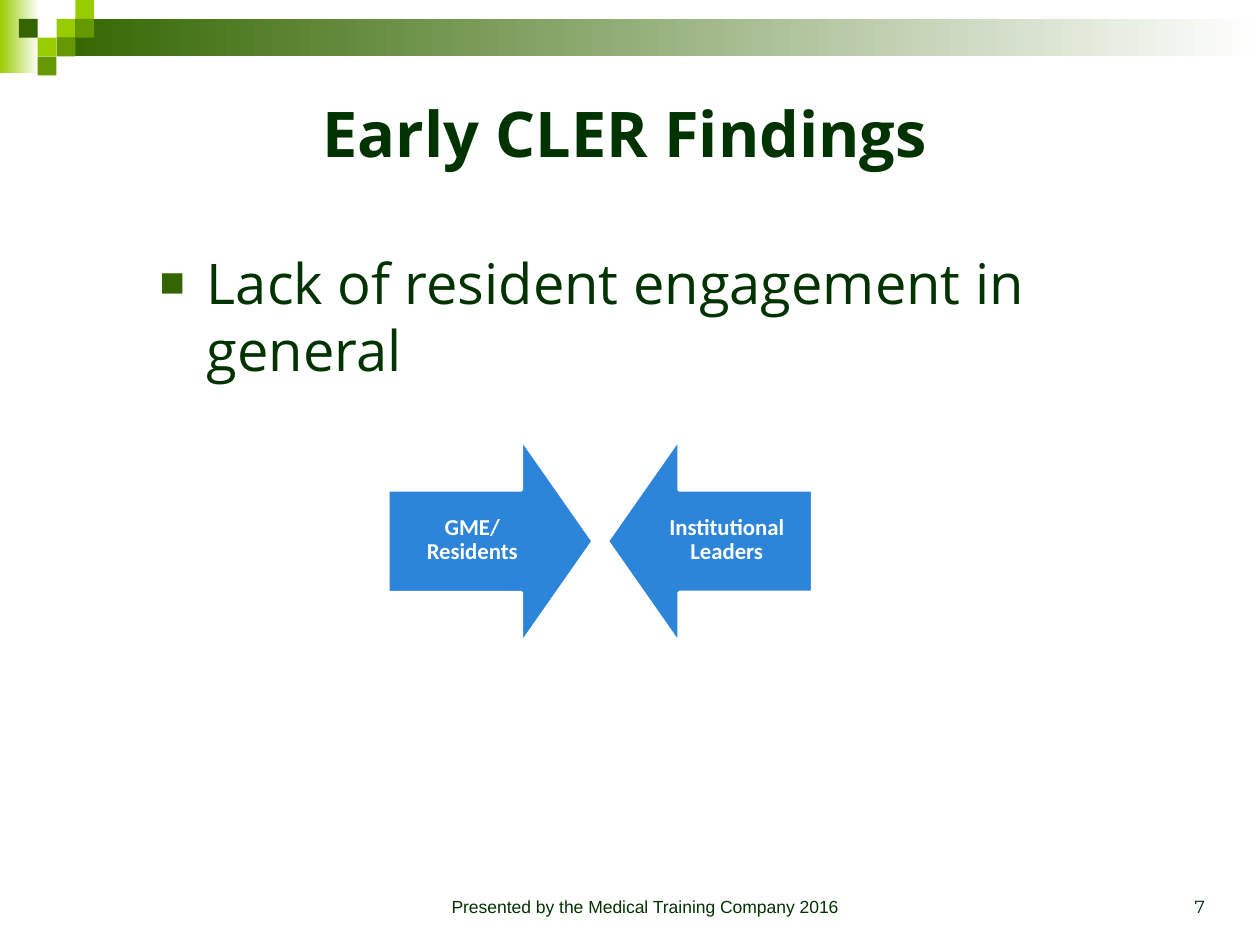
from dataclasses import dataclass

from lxml.etree import SubElement as Sub
from pptx import Presentation as Deck
from pptx.dml.color import RGBColor as Rgb
from pptx.enum.shapes import MSO_SHAPE as Kind
from pptx.enum.text import MSO_ANCHOR as Anchor, PP_ALIGN as Align
from pptx.oxml.ns import qn
from pptx.shapes.autoshape import Shape
from pptx.slide import Slide
from pptx.text.text import _Paragraph as Para
from pptx.util import Cm, Pt


@dataclass(frozen=True)
class Theme:
    ink: str = "003300"
    dark: str = "336600"
    mid: str = "669900"
    lime: str = "99CC00"
    blue: str = "2C85D8"
    white: str = "FFFFFF"
    head: float = 36
    body: float = 32
    label: float = 13
    foot: float = 10
    main: str = "Open Sans"
    sans: str = "Arial"
    page: str = "Montserrat"
    tag: str = "Calibri"


@dataclass(frozen=True)
class Box:
    left: float
    top: float
    width: float
    height: float

    def cm(self) -> tuple[Cm, Cm, Cm, Cm]:
        return Cm(self.left), Cm(self.top), Cm(self.width), Cm(self.height)


@dataclass(frozen=True)
class Band:
    box: Box
    start: str


@dataclass(frozen=True)
class Tile:
    col: int
    row: int
    color: str


@dataclass(frozen=True)
class Words:
    text: str
    box: Box
    size: float
    font: str
    color: str
    bold: bool = False
    align: Align = Align.CENTER
    anchor: Anchor = Anchor.MIDDLE
    inset: float = 0.13


@dataclass(frozen=True)
class Arrow:
    left: float
    turn: int
    label: Words


LOOK = Theme()
TILE = 0.38
SIDE = 4.14
ROW = 8.84

BANDS = [
    Band(Box(0, 0, 0.79, 1.47), LOOK.lime),
    Band(Box(1.14, TILE, 24.26, 0.76), LOOK.dark),
]
TILES = [
    Tile(3, 1, LOOK.lime),
    Tile(4, 0, LOOK.lime),
    Tile(4, 1, LOOK.mid),
    Tile(2, 2, LOOK.lime),
    Tile(1, 1, LOOK.dark),
    Tile(3, 2, LOOK.mid),
    Tile(2, 3, LOOK.mid),
]
TITLE = Words("Early CLER Findings", Box(1.9, 1.07, 21.39, 3.18),
              LOOK.head, LOOK.main, LOOK.ink, bold=True)
POINT = Words("Lack of resident engagement in general", Box(2.97, 4.88, 21.59, 12.07),
              LOOK.body, LOOK.main, LOOK.ink, align=Align.LEFT, anchor=Anchor.TOP)
FOOT = [
    Words("Presented by the Medical Training Company 2016",
          Box(7.82, 17.35, 10.36, 1.27), LOOK.foot, LOOK.sans, LOOK.ink,
          anchor=Anchor.BOTTOM),
    Words("7", Box(18.62, 17.35, 5.92, 1.27), LOOK.foot, LOOK.page, LOOK.ink,
          align=Align.RIGHT, anchor=Anchor.BOTTOM),
]


def label(text: str, left: float) -> Words:
    return Words(text, Box(left, 9.86, 3.4, 2.06), LOOK.label, LOOK.tag,
                 LOOK.white, bold=True, inset=0.25)


ARROWS = [
    Arrow(7.82, 270, label("GME/Residents", 7.82)),
    Arrow(12.24, 90, label("Institutional Leaders", 12.95)),
]


def add_form(slide: Slide, kind: Kind, box: Box) -> Shape:
    form = slide.shapes.add_shape(kind, *box.cm())
    form.shadow.inherit = False
    form.line.fill.background()
    return form


def paint(form: Shape, color: str) -> None:
    form.fill.solid()
    form.fill.fore_color.rgb = Rgb.from_string(color)


def add_band(slide: Slide, band: Band) -> None:
    fill = add_form(slide, Kind.RECTANGLE, band.box).fill
    fill.gradient()
    fill.gradient_angle = 0
    for stop, color in zip(fill.gradient_stops, (band.start, LOOK.white)):
        stop.color.rgb = Rgb.from_string(color)


def add_tile(slide: Slide, tile: Tile) -> None:
    box = Box(tile.col * TILE, tile.row * TILE, TILE, TILE)
    paint(add_form(slide, Kind.RECTANGLE, box), tile.color)


def add_words(slide: Slide, words: Words) -> Para:
    frame = slide.shapes.add_textbox(*words.box.cm()).text_frame
    frame.word_wrap = True
    frame.vertical_anchor = words.anchor
    frame.margin_left = frame.margin_right = Cm(0.25)
    frame.margin_top = frame.margin_bottom = Cm(words.inset)
    para = frame.paragraphs[0]
    para.alignment = words.align
    run = para.add_run()
    run.text = words.text
    run.font.size = Pt(words.size)
    run.font.name = words.font
    run.font.bold = words.bold
    run.font.color.rgb = Rgb.from_string(words.color)
    return para


def add_point(slide: Slide, words: Words) -> None:
    para = add_words(slide, words)
    para.space_before = Pt(words.size * 0.2)
    props = para._p.get_or_add_pPr()
    props.set("marL", str(Cm(0.95)))
    props.set("indent", str(-Cm(0.95)))
    Sub(Sub(props, qn("a:buClr")), qn("a:srgbClr"), val=LOOK.dark)
    Sub(props, qn("a:buSzPct"), val="75000")
    Sub(props, qn("a:buFont"), typeface=LOOK.sans)
    Sub(props, qn("a:buChar"), char="■")


def add_arrow(slide: Slide, arrow: Arrow) -> None:
    form = add_form(slide, Kind.DOWN_ARROW, Box(arrow.left, ROW, SIDE, SIDE))
    form.rotation = arrow.turn
    form.adjustments[0] = 0.5
    form.adjustments[1] = 0.35
    paint(form, LOOK.blue)
    form.line.color.rgb = Rgb.from_string(LOOK.white)
    form.line.width = Pt(2)
    add_words(slide, arrow.label).line_spacing = 0.9


def main() -> None:
    deck = Deck()
    deck.slide_width, deck.slide_height = Cm(25.4), Cm(19.05)
    slide = deck.slides.add_slide(deck.slide_layouts[6])
    for band in BANDS:
        add_band(slide, band)
    for tile in TILES:
        add_tile(slide, tile)
    add_words(slide, TITLE)
    add_point(slide, POINT)
    for words in FOOT:
        add_words(slide, words)
    for arrow in ARROWS:
        add_arrow(slide, arrow)
    deck.save("out.pptx")


if __name__ == "__main__":
    main()
